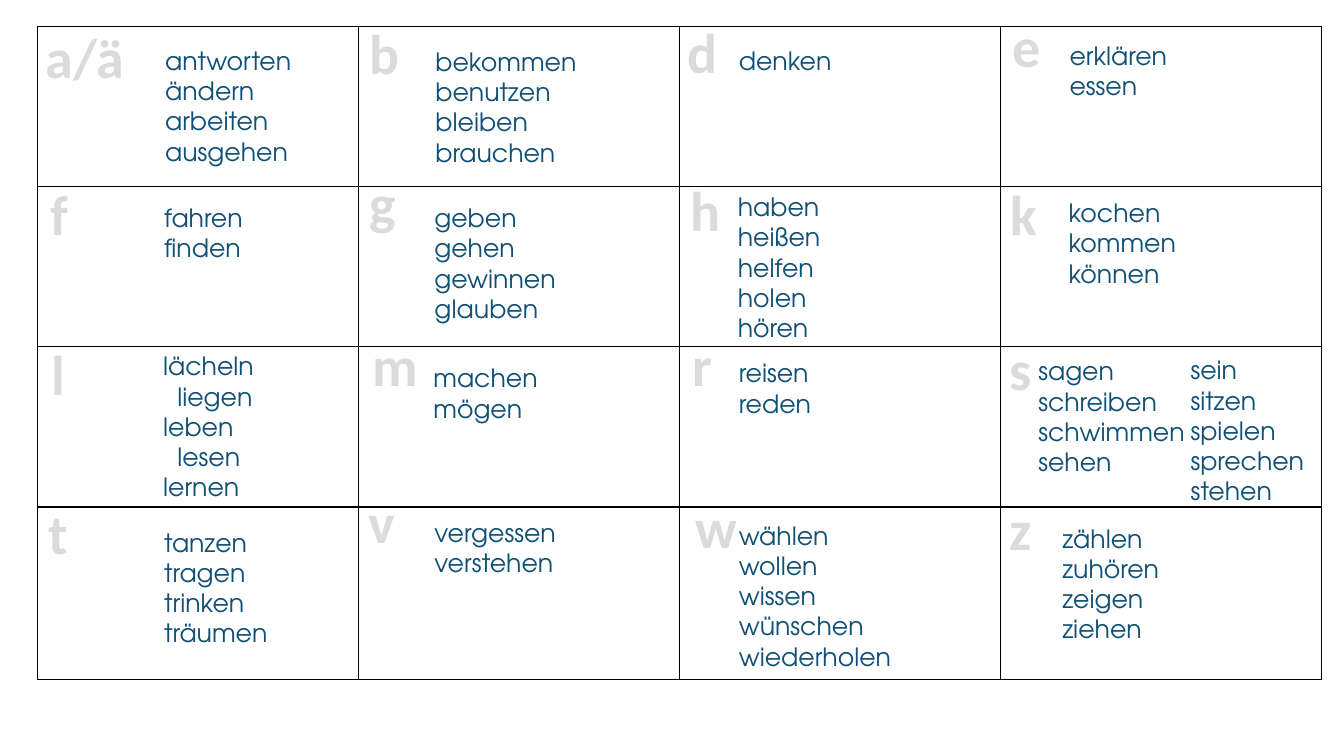
from lxml import etree
from pptx import Presentation
from pptx import util as u
from pptx.dml.color import RGBColor
from pptx.enum import text
from pptx.oxml import ns

COLORS = {"letter": "DBDBDB", "verb": "115076", "grid": "000000"}
FORMATS = {
    "letter": {"name": "Calibri", "size": u.Pt(40), "bold": True},
    "verb": {"name": "TeX Gyre Adventor", "size": u.Pt(18), "bold": False},
}
COLUMN_WIDTH = 3.185
ROW_HEIGHTS = [1.59, 1.59, 1.59, 1.71]
LETTER_HEIGHT = 0.77
LINE_HEIGHT = 0.3
INSETS = 0.1

# letter, left, top, width
LETTERS = [
    ("a/ä", 0.34, 0.17, 1), ("b", 3.56, 0.13, 0.5),
    ("d", 6.72, 0.12, 0.43), ("e", 9.94, 0.07, 0.43),
    ("f", 0.37, 1.73, 0.43), ("g", 3.57, 1.62, 0.43),
    ("h", 6.75, 1.69, 0.43), ("k", 9.92, 1.73, 0.43),
    ("l", 0.36, 3.32, 0.43), ("m", 3.6, 3.23, 0.43),
    ("r", 6.75, 3.23, 0.43), ("s", 9.91, 3.27, 0.43),
    ("t", 0.36, 4.9, 0.43), ("v", 3.56, 4.79, 0.43),
    ("w", 6.8, 4.84, 0.43), ("z", 9.91, 4.86, 0.43),
]

# verbs, left, top, width
VERBS = [
    ("antworten ändern arbeiten ausgehen", 1.54, 0.4, 1.74),
    ("bekommen benutzen bleiben brauchen", 4.22, 0.41, 1.71),
    ("denken", 7.23, 0.4, 1.86),
    ("erklären essen", 10.51, 0.35, 1.71),
    ("fahren finden", 1.53, 1.96, 1.74),
    ("geben gehen gewinnen glauben", 4.21, 1.96, 1.71),
    ("haben heißen helfen holen hören", 7.22, 1.85, 1.86),
    ("kochen kommen können", 10.5, 1.91, 1.71),
    ("lächeln liegen leben lesen lernen", 1.52, 3.43, 1.74),
    ("machen mögen", 4.2, 3.55, 1.71),
    ("reisen reden", 7.23, 3.5, 1.86),
    ("sagen schreiben schwimmen sehen", 10.2, 3.48, 1.84),
    ("sein sitzen spielen sprechen stehen", 11.71, 3.47, 1.84),
    ("tanzen tragen trinken träumen", 1.53, 5.18, 1.74),
    ("vergessen verstehen", 4.21, 5.08, 1.71),
    ("wählen wollen wissen wünschen wiederholen", 7.23, 5.11, 1.86),
    ("zählen zuhören zeigen ziehen", 10.44, 5.14, 2.02),
]
INDENTED = {"liegen": 0.14, "lesen": 0.14}


class VerbPage:
    """Holds the current slide and draws its elements in one style."""

    def __init__(self, deck):
        self.page = deck.slides.add_slide(deck.slide_layouts[6])

    def grid(self, left, top):
        count = len(ROW_HEIGHTS)
        frame = self.page.shapes.add_table(
            count, 4, u.Inches(left), u.Inches(top),
            u.Inches(4 * COLUMN_WIDTH), u.Inches(sum(ROW_HEIGHTS)))
        table = frame.table
        table.first_row = table.horz_banding = False
        for column in table.columns:
            column.width = u.Inches(COLUMN_WIDTH)
        for row, height in zip(table.rows, ROW_HEIGHTS):
            row.height = u.Inches(height)
        for cell in table.iter_cells():
            self.borders(cell)
            cell.fill.background()

    def borders(self, cell):
        properties = cell._tc.get_or_add_tcPr()
        for side in ("lnL", "lnR", "lnT", "lnB"):
            line = etree.SubElement(properties, ns.qn("a:" + side), w=str(u.Pt(1)))
            fill = etree.SubElement(line, ns.qn("a:solidFill"))
            etree.SubElement(fill, ns.qn("a:srgbClr"), val=COLORS["grid"])

    def lines(self, words, left, top, width, height, style, align, wrap=True):
        """Add a text box with one paragraph for each word."""
        box = self.page.shapes.add_textbox(*map(u.Inches, (left, top, width, height)))
        frame = box.text_frame
        frame.word_wrap = wrap
        frame.auto_size = text.MSO_AUTO_SIZE.SHAPE_TO_FIT_TEXT
        for index, word in enumerate(words):
            para = frame.add_paragraph() if index else frame.paragraphs[0]
            para.alignment = align
            if word in INDENTED:
                para._p.get_or_add_pPr().set("marL", str(u.Inches(INDENTED[word])))
            span = para.add_run()
            span.text = word
            for key, value in FORMATS[style].items():
                setattr(span.font, key, value)
            span.font.color.rgb = RGBColor.from_string(COLORS[style])

    def letter(self, letter, left, top, width):
        self.lines([letter], left, top, width, LETTER_HEIGHT, "letter",
                   text.PP_ALIGN.CENTER, wrap=len(letter) == 1)

    def verbs(self, verbs, left, top, width):
        words = verbs.split()
        height = INSETS + LINE_HEIGHT * len(words)
        self.lines(words, left, top, width, height, "verb", text.PP_ALIGN.LEFT)


def main():
    deck = Presentation()
    deck.slide_width, deck.slide_height = u.Inches(13.33), u.Inches(7.5)
    page = VerbPage(deck)
    page.grid(0.37, 0.26)
    for entry in LETTERS:
        page.letter(*entry)
    for entry in VERBS:
        page.verbs(*entry)
    deck.save("out.pptx")


if __name__ == "__main__":
    main()
